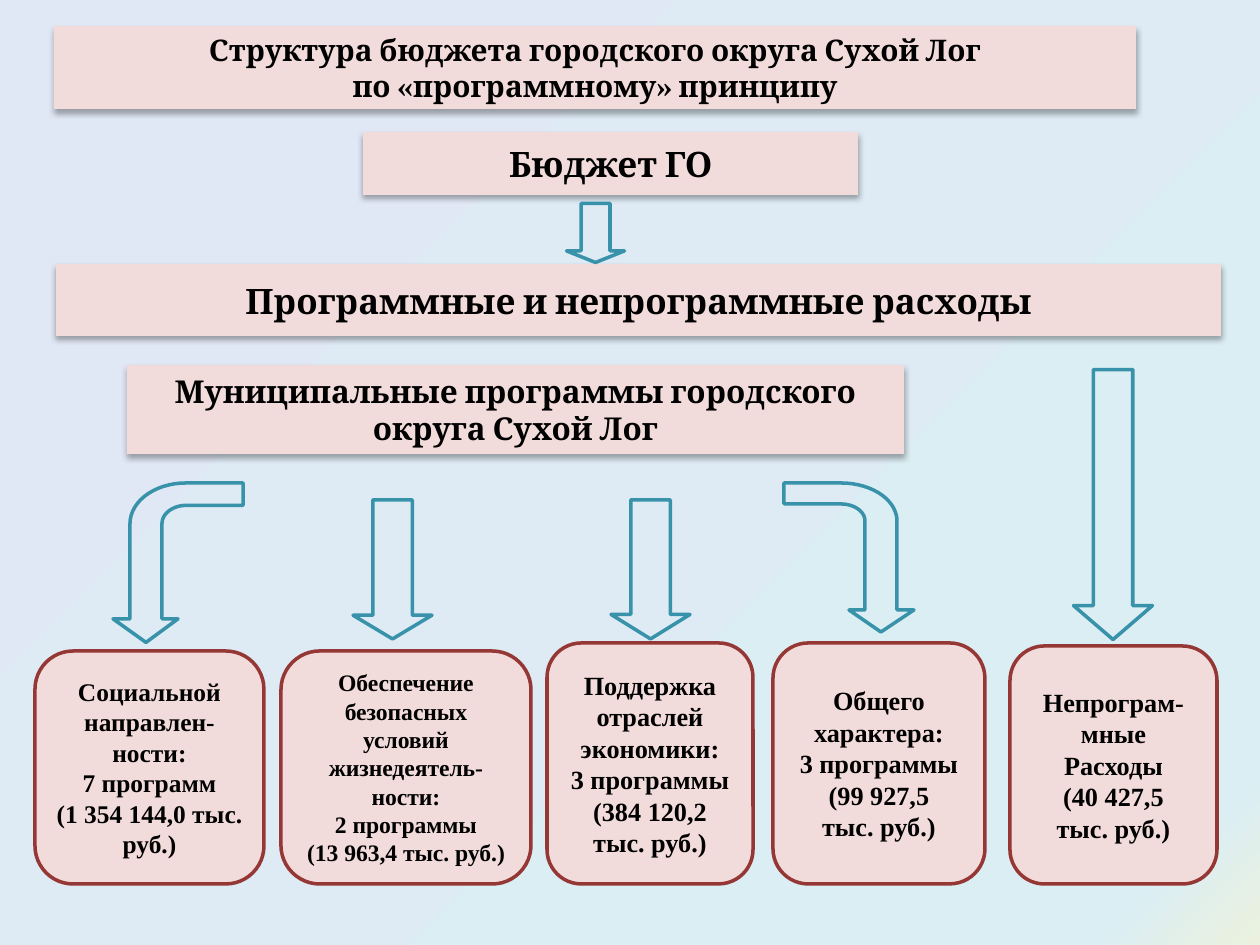
import copy
import math

import pptx
import pptx.dml.color
import pptx.enum.shapes
import pptx.enum.text
import pptx.oxml
import pptx.oxml.ns
import pptx.util

PX = 9525 * 96 / 126  # EMU per px at 126 px to the inch... scaled below
PX = 914400 / 126
SHAPES = pptx.enum.shapes.MSO_SHAPE
PINK, MAROON, TEAL, BLACK = "F2DCDB", "953735", "3792AA", "000000"
SHADOW = (
    '<a:outerShdw %s blurRad="44450" dist="27940" dir="5400000" algn="ctr" rotWithShape="0">'
    '<a:srgbClr val="000000"><a:alpha val="32000"/></a:srgbClr></a:outerShdw>'
    % pptx.oxml.ns.nsdecls("a")
)


def rgb(value):
    return pptx.dml.color.RGBColor.from_string(value)


def add_box(kind, frame, paragraphs, font, size):
    box = slide.shapes.add_shape(kind, *[round(v * PX) for v in frame])
    box.shadow.inherit = False
    box.fill.solid()
    box.fill.fore_color.rgb = rgb(PINK)
    text = box.text_frame
    text.word_wrap = True
    text.vertical_anchor = pptx.enum.text.MSO_ANCHOR.MIDDLE
    text.margin_left = text.margin_right = round(10 * PX)
    for i, line in enumerate(paragraphs):
        paragraph = text.paragraphs[0] if i == 0 else text.add_paragraph()
        paragraph.alignment = pptx.enum.text.PP_ALIGN.CENTER
        run = paragraph.add_run()
        run.text = line
        run.font.name = font
        run.font.size = pptx.util.Pt(size)
        run.font.bold = True
        run.font.color.rgb = rgb(BLACK)
    return box


deck = pptx.Presentation()
deck.slide_width = round(1260 * PX)
deck.slide_height = round(945 * PX)
slide = deck.slides.add_slide(deck.slide_layouts[6])

# Background gradient, from the lower right corner to the upper left
background = slide.background.fill
background.gradient()
background.gradient_angle = 135
stop_list = slide._element.find(".//" + pptx.oxml.ns.qn("a:gsLst"))
stop_list.append(copy.deepcopy(stop_list[-1]))
stops = [(0, "EBF1DE"), (0.08, "DBEEF4"), (1, "E1E8F5")]
for stop, (position, colour) in zip(background.gradient_stops, stops):
    stop.position = position
    stop.color.rgb = rgb(colour)

# Headings with a soft shadow
headings = [
    ((54, 26, 1082, 83), 17,
     ["Структура бюджета городского округа Сухой Лог", "по «программному» принципу"]),
    ((363, 132, 495, 63), 20, ["Бюджет ГО"]),
    ((56, 264, 1165, 72), 20, ["Программные и непрограммные расходы"]),
    ((127, 365, 777, 89), 18, ["Муниципальные программы городского округа Сухой Лог"]),
]
for frame, size, lines in headings:
    heading = add_box(SHAPES.RECTANGLE, frame, lines, "Cambria", size)
    heading.line.fill.background()
    effects = heading._element.spPr.find(pptx.oxml.ns.qn("a:effectLst"))
    effects.append(pptx.oxml.parse_xml(SHADOW))

# Spending groups
groups = [
    ((35, 651, 229, 233), 14.5,
     ["Социальной направлен-", "ности:", "7 программ", "(1 354 144,0 тыс. руб.)"]),
    ((281, 651, 250, 233), 13.5,
     ["Обеспечение безопасных условий жизнедеятель- ности:", "2 программы",
      "(13 963,4 тыс. руб.)"]),
    ((547, 643, 206, 241), 15,
     ["Поддержка отраслей экономики:", "3 программы (384 120,2 тыс. руб.)"]),
    ((773, 643, 212, 241), 15,
     ["Общего характера:", "3 программы (99 927,5", "тыс. руб.)"]),
    ((1010, 646, 207, 238), 15,
     ["Непрограм-мные", "Расходы", "(40 427,5", "тыс. руб.)"]),
]
for frame, size, lines in groups:
    group = add_box(SHAPES.ROUNDED_RECTANGLE, frame, lines, "Times New Roman", size)
    group.line.color.rgb = rgb(MAROON)
    group.line.width = pptx.util.Pt(2)

# Straight arrows: right arrows turned to point down
arrows = []
for frame, head in [
    ((566, 204, 59, 58), 0.2),
    ((323, 530, 139, 79), 0.3),
    ((581, 530, 139, 79), 0.31),
    ((978, 465, 270, 79), 0.43),
]:
    arrow = slide.shapes.add_shape(SHAPES.RIGHT_ARROW, *[round(v * PX) for v in frame])
    arrow.rotation = 90
    arrow.adjustments[0] = 0.5
    arrow.adjustments[1] = head
    arrows.append(arrow)

# Bent arrows: one outline, mirrored and stretched for the left side
quarter = [math.radians(angle) for angle in range(0, 91, 6)]
outer = [(57 + 56 * math.sin(a), 38 - 38 * math.cos(a)) for a in quarter]
inner = [(57 + 24 * math.cos(a), 38 - 17 * math.sin(a)) for a in quarter]
outline = [(0, 0), *outer, (113, 127), (130, 127), (97, 149), (65, 127), (81, 127),
           *inner, (0, 21)]
for tail, side, stretch in [(784, 1, 1), (243, -1, 1.07)]:
    points = [((tail + side * x) * PX, (483 + stretch * y) * PX) for x, y in outline]
    builder = slide.shapes.build_freeform(*points[0])
    builder.add_line_segments(points[1:], close=True)
    arrows.append(builder.convert_to_shape())

for arrow in arrows:
    arrow.shadow.inherit = False
    arrow.fill.background()
    arrow.line.color.rgb = rgb(TEAL)
    arrow.line.width = pptx.util.Pt(2)

deck.save("out.pptx")
